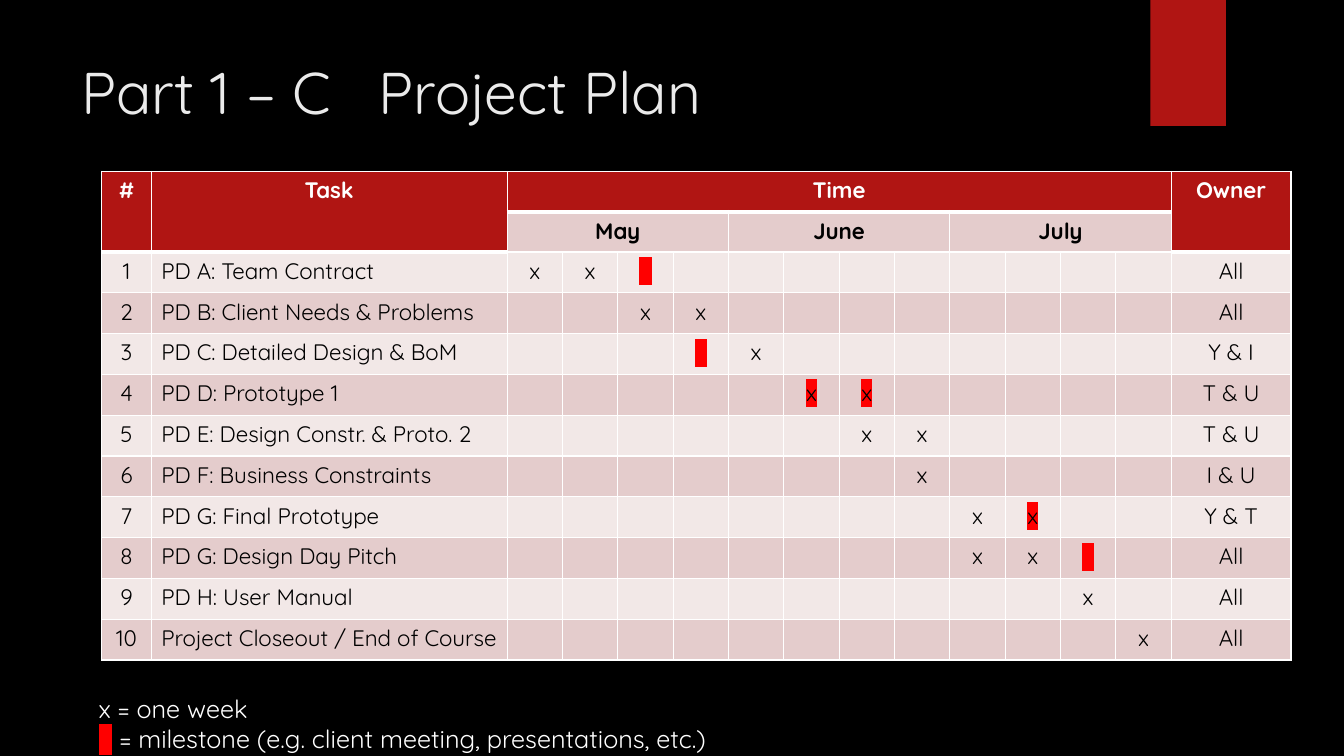
"""Build the project plan slide with its schedule table and legend."""
import pptx
import pptx.util
import pptx.dml.color
import pptx.enum.shapes
import pptx.enum.text
import pptx.oxml.ns
from lxml import etree

Inches = pptx.util.Inches
ALIGN = pptx.enum.text.PP_ALIGN
ANCHOR = pptx.enum.text.MSO_ANCHOR
AUTO_SIZE = pptx.enum.text.MSO_AUTO_SIZE
qn = pptx.oxml.ns.qn

COLORS = {"background": "000000", "accent": "B01513", "title": "EBEBEB",
          "white": "FFFFFF", "black": "000000", "light": "F2E8E7",
          "dark": "E4CCCC", "milestone": "FF0000"}
FONT = "Quicksand"
TITLE = "Part 1 – C   Project Plan"
MARKER = "  "
MONTHS = ["May", "June", "July"]
WEEKS_PER_MONTH = 4
TASKS = [
    ("PD A: Team Contract", {0: "x", 1: "x", 2: MARKER}, {2}, "All"),
    ("PD B: Client Needs & Problems", {2: "x", 3: "x"}, set(), "All"),
    ("PD C: Detailed Design & BoM", {3: MARKER, 4: "x"}, {3}, "Y & I"),
    ("PD D: Prototype 1", {5: "x", 6: "x"}, {5, 6}, "T & U"),
    ("PD E: Design Constr. & Proto. 2", {6: "x", 7: "x"}, set(), "T & U"),
    ("PD F: Business Constraints", {7: "x"}, set(), "I & U"),
    ("PD G: Final Prototype", {8: "x", 9: "x"}, {9}, "Y & T"),
    ("PD G: Design Day Pitch", {8: "x", 9: "x", 10: MARKER}, {10}, "All"),
    ("PD H: User Manual", {10: "x"}, set(), "All"),
    ("Project Closeout / End of Course", {11: "x"}, set(), "All"),
]
LEGEND = [[("x = one week", False)],
          [(MARKER, True),
           (" = milestone (e.g. client meeting, presentations, etc.)", False)]]

WEEKS = len(MONTHS) * WEEKS_PER_MONTH
FIRST_WEEK = 2
OWNER = FIRST_WEEK + WEEKS
HEADER_ROWS = 2
HEADER_HEIGHT, TASKS_HEIGHT = Inches(0.4), Inches(4.05)
NUMBER_WIDTH, TASK_WIDTH = Inches(0.49), Inches(3.53)
TIME_WIDTH, OWNER_WIDTH = Inches(6.59), Inches(1.19)


def rgb(name):
    return pptx.dml.color.RGBColor.from_string(COLORS[name])


def apply(target, values):
    for name, value in values.items():
        setattr(target, name, value)


def add_text(paragraph, text, size, color, bold=False, highlighted=False):
    run = paragraph.add_run()
    run.text = text
    apply(run.font, {"size": pptx.util.Pt(size), "bold": bold, "name": FONT})
    run.font.color.rgb = rgb(color)
    if highlighted:
        highlight = etree.Element(qn("a:highlight"))
        etree.SubElement(highlight, qn("a:srgbClr"), val=COLORS["milestone"])
        run.font._element.find(qn("a:solidFill")).addnext(highlight)


def format_cell(cell, fill, top=1, bottom=1):
    properties = cell._tc.get_or_add_tcPr()
    for side, points in {"L": 1, "R": 1, "T": top, "B": bottom}.items():
        border = etree.SubElement(properties, qn(f"a:ln{side}"),
                                  w=str(pptx.util.Pt(points)))
        paint = etree.SubElement(border, qn("a:solidFill"))
        etree.SubElement(paint, qn("a:srgbClr"), val=COLORS["white"])
    cell.fill.solid()
    cell.fill.fore_color.rgb = rgb(fill)


def write_cell(cell, text, color="black", bold=False, highlighted=False,
               alignment=ALIGN.CENTER):
    paragraph = cell.text_frame.paragraphs[0]
    paragraph.alignment = alignment
    if text:
        add_text(paragraph, text, 16, color, bold, highlighted)
    else:
        etree.SubElement(paragraph._p, qn("a:endParaRPr"), sz="1600")


def add_title(slide):
    title = slide.shapes.title
    apply(title, {"left": Inches(0.71), "top": Inches(0.5),
                  "width": Inches(10.29), "height": Inches(1.53)})
    apply(title.text_frame, {"word_wrap": True, "vertical_anchor": ANCHOR.TOP,
                             "auto_size": AUTO_SIZE.NONE})
    heading = title.text_frame.paragraphs[0]
    heading.alignment = ALIGN.LEFT
    add_text(heading, TITLE, 42, "title")


def add_ribbon(slide):
    ribbon = slide.shapes.add_shape(
        pptx.enum.shapes.MSO_SHAPE.RECTANGLE,
        Inches(11.41), 0, Inches(0.75), Inches(1.25))
    ribbon.shadow.inherit = False
    ribbon.fill.solid()
    ribbon.fill.fore_color.rgb = rgb("accent")
    ribbon.line.fill.background()


def add_schedule(slide):
    widths = [NUMBER_WIDTH, TASK_WIDTH] + [TIME_WIDTH // WEEKS] * WEEKS + [OWNER_WIDTH]
    heights = [HEADER_HEIGHT] * HEADER_ROWS + [TASKS_HEIGHT // len(TASKS)] * len(TASKS)
    schedule = slide.shapes.add_table(
        len(heights), len(widths), Inches(1.01), Inches(1.7),
        sum(widths), sum(heights)).table
    for column, width in zip(schedule.columns, widths):
        column.width = width
    for row, height in zip(schedule.rows, heights):
        row.height = height

    for column in range(len(widths)):
        in_time = FIRST_WEEK <= column < OWNER
        format_cell(schedule.cell(0, column), "accent", bottom=3)
        format_cell(schedule.cell(1, column), "dark" if in_time else "accent",
                    top=3 if in_time else 1, bottom=1 if in_time else 3)
    for column, label in {0: "#", 1: "Task", OWNER: "Owner"}.items():
        schedule.cell(0, column).merge(schedule.cell(1, column))
        write_cell(schedule.cell(0, column), label, "white", bold=True)
    schedule.cell(0, FIRST_WEEK).merge(schedule.cell(0, OWNER - 1))
    write_cell(schedule.cell(0, FIRST_WEEK), "Time", "white", bold=True)
    for index, month in enumerate(MONTHS):
        start = FIRST_WEEK + index * WEEKS_PER_MONTH
        schedule.cell(1, start).merge(schedule.cell(1, start + WEEKS_PER_MONTH - 1))
        write_cell(schedule.cell(1, start), month, bold=True)

    for index, (task, marks, milestones, owner) in enumerate(TASKS):
        row = HEADER_ROWS + index
        for column in range(len(widths)):
            format_cell(schedule.cell(row, column), "dark" if index % 2 else "light")
        write_cell(schedule.cell(row, 0), str(index + 1))
        write_cell(schedule.cell(row, 1), task, alignment=ALIGN.LEFT)
        for week in range(WEEKS):
            write_cell(schedule.cell(row, FIRST_WEEK + week), marks.get(week, ""),
                       highlighted=week in milestones)
        write_cell(schedule.cell(row, OWNER), owner)


def add_legend(slide):
    legend = slide.shapes.add_textbox(
        Inches(0.88), Inches(6.83), Inches(6.78), Inches(0.71)).text_frame
    legend.word_wrap = True
    for index, parts in enumerate(LEGEND):
        entry = legend.add_paragraph() if index else legend.paragraphs[0]
        for text, highlighted in parts:
            add_text(entry, text, 18, "white", highlighted=highlighted)


def main():
    presentation = pptx.Presentation()
    apply(presentation, {"slide_width": Inches(13.33), "slide_height": Inches(7.5)})
    slide = presentation.slides.add_slide(presentation.slide_layouts[5])
    slide.background.fill.solid()
    slide.background.fill.fore_color.rgb = rgb("background")
    add_ribbon(slide)
    add_title(slide)
    add_schedule(slide)
    add_legend(slide)
    presentation.save("out.pptx")


if __name__ == "__main__":
    main()
